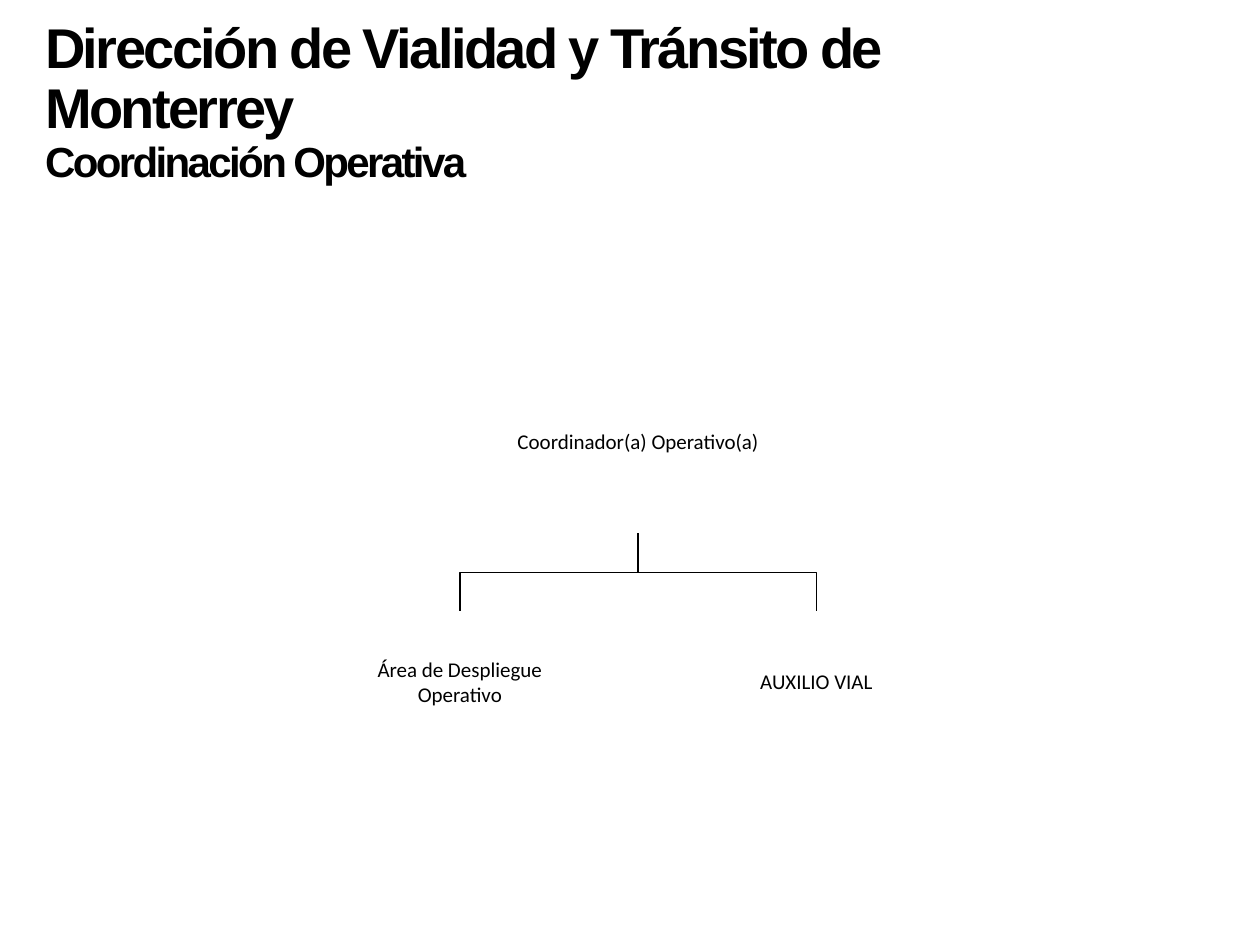
"""Build the organisation chart of the operations coordination office."""

from dataclasses import dataclass

from pptx import Presentation
from pptx.dml.color import RGBColor
from pptx.enum.shapes import MSO_SHAPE
from pptx.enum.text import MSO_ANCHOR, PP_ALIGN
from pptx.shapes.autoshape import Shape
from pptx.slide import Slide
from pptx.text.text import TextFrame
from pptx.util import Inches, Pt

RECTANGLE = MSO_SHAPE.RECTANGLE
TOP, MIDDLE = MSO_ANCHOR.TOP, MSO_ANCHOR.MIDDLE
LEFT, CENTER = PP_ALIGN.LEFT, PP_ALIGN.CENTER
WIDTH, HEIGHT = Inches(10), Inches(7.5)


@dataclass(frozen=True)
class Theme:
    ink: RGBColor = RGBColor(0, 0, 0)
    paper: RGBColor = RGBColor(255, 255, 255)
    heading_font: str = "Arial"
    label_font: str = "Calibri"
    title_size: int = 32
    subtitle_size: int = 24
    label_size: int = 12
    line_width: int = 1


@dataclass(frozen=True)
class Area:
    """Centre, top and size as percentages of the slide."""

    center: float
    top: float
    width: float
    height: float

    @property
    def bottom(self) -> float:
        return self.top + self.height


@dataclass(frozen=True)
class Post:
    label: str
    area: Area


THEME = Theme()
AXIS, BRANCH_OFFSET = 50.65, 14.15
COORDINATOR = Post("Coordinador(a) Operativo(a)", Area(AXIS, 36.9, 29.3, 19.55))
BRANCHES = [
    Post(label, Area(AXIS + side * BRANCH_OFFSET, 64.7, 19.7, 14.8))
    for side, label in ((-1, "Área de Despliegue Operativo"), (1, "AUXILIO VIAL"))
]
HEADING = Area(39.9, 1.47, 74.6, 19.6)


def across(percent: float) -> int:
    """Convert a share of the slide width to a length."""
    return round(WIDTH * percent / 100)


def down(percent: float) -> int:
    """Convert a share of the slide height to a length."""
    return round(HEIGHT * percent / 100)


def bounds(area: Area) -> tuple[int, int, int, int]:
    """Return left, top, width and height of an area."""
    return (across(area.center - area.width / 2), down(area.top),
            across(area.width), down(area.height))


def write(frame: TextFrame, text: str, *, size: int, font: str, bold: bool = False,
          align: PP_ALIGN = LEFT, line_spacing: float = 1.0, tracking: float = 0) -> None:
    """Write one formatted paragraph into a text frame."""
    paragraph = frame.add_paragraph() if frame.text else frame.paragraphs[0]
    paragraph.alignment = align
    paragraph.line_spacing = line_spacing
    run = paragraph.add_run()
    run.text = text
    run.font.size, run.font.name, run.font.bold = Pt(size), font, bold
    run.font.color.rgb = THEME.ink
    if tracking:
        run._r.get_or_add_rPr().set("spc", str(round(tracking * 100)))


def draw_heading(slide: Slide, lines: list[tuple[str, int]]) -> None:
    """Draw the slide heading with its subtitle."""
    frame = slide.shapes.add_textbox(*bounds(HEADING)).text_frame
    frame.word_wrap = True
    frame.vertical_anchor = TOP
    for text, size in lines:
        write(frame, text, size=size, font=THEME.heading_font, bold=True,
              line_spacing=0.9, tracking=-1.5)


def draw_branch_line(slide: Slide, parent: Area, child: Area) -> None:
    """Draw an elbow line from a parent post to a child post."""
    bend = (parent.bottom + child.top) / 2
    start, *corners = [
        (across(x), down(y))
        for x, y in ((parent.center, parent.bottom), (parent.center, bend),
                     (child.center, bend), (child.center, child.top))
    ]
    builder = slide.shapes.build_freeform(*start)
    builder.add_line_segments(corners, close=False)
    elbow = builder.convert_to_shape()
    elbow.shadow.inherit = False
    elbow.fill.background()
    elbow.line.color.rgb = THEME.ink
    elbow.line.width = Pt(THEME.line_width)


def draw_post(slide: Slide, post: Post) -> Shape:
    """Draw one post as a borderless box with a centred label."""
    box = slide.shapes.add_shape(RECTANGLE, *bounds(post.area))
    box.shadow.inherit = False
    box.fill.solid()
    box.fill.fore_color.rgb = THEME.paper
    box.line.fill.background()
    frame = box.text_frame
    frame.word_wrap = True
    frame.vertical_anchor = MIDDLE
    frame.margin_left = frame.margin_right = Inches(0.01)
    frame.margin_top = frame.margin_bottom = Inches(0.01)
    write(frame, post.label, size=THEME.label_size, font=THEME.label_font, align=CENTER)
    return box


def main() -> None:
    """Build and save the presentation."""
    deck = Presentation()
    deck.slide_width, deck.slide_height = WIDTH, HEIGHT
    slide = deck.slides.add_slide(deck.slide_layouts[6])
    draw_heading(slide, [
        ("Dirección de Vialidad y Tránsito de Monterrey", THEME.title_size),
        ("Coordinación Operativa", THEME.subtitle_size),
    ])
    draw_post(slide, COORDINATOR)
    for branch in BRANCHES:
        draw_branch_line(slide, COORDINATOR.area, branch.area)
        draw_post(slide, branch)
    deck.save("out.pptx")


if __name__ == "__main__":
    main()
